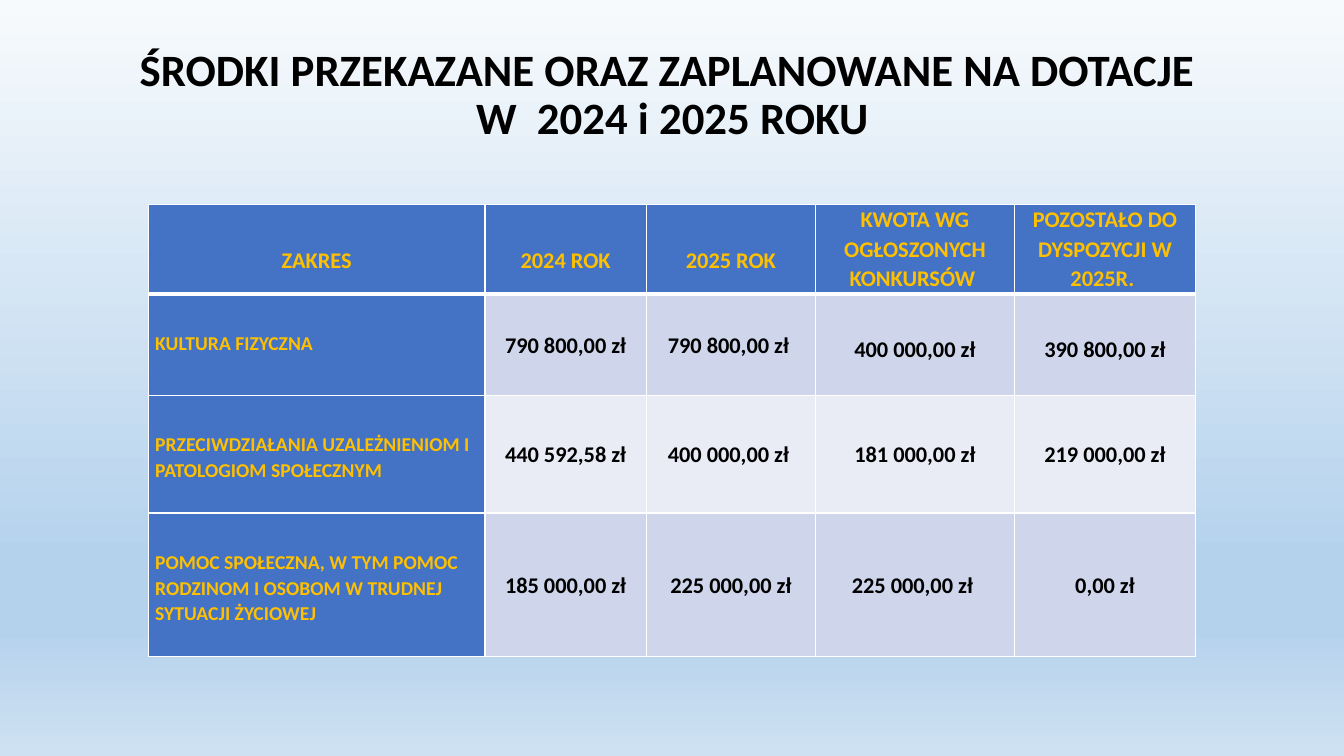
from lxml.etree import SubElement
from pptx import Presentation
from pptx.dml.color import RGBColor
from pptx.enum.text import MSO_ANCHOR, PP_ALIGN
from pptx.oxml.ns import qn
from pptx.util import Inches, Pt

WIDE, HIGH = Inches(13.33), Inches(7.5)
FACE = "Calibri"
HUES = {
    "black": "000000", "white": "FFFFFF", "gold": "FFC000", "blue": "4472C4",
    "dark": "CFD5EA", "light": "E9EBF5",
    "top": "F7FAFD", "sky": "B5D2EC", "base": "CEE1F2",
}
STOPS = [(0, "top"), (74, "sky"), (83, "sky"), (100, "base")]

# Table lengths in inches
COLS = [3.34, 1.6, 1.68, 1.97, 1.8]
ROWS = [0.89, 1, 1.17, 1.42]
SIDE = 0.07
DROP = {16: 0.4, 14: 0.36}  # one line plus its gap, by text size

TITLE = "ŚRODKI PRZEKAZANE ORAZ ZAPLANOWANE NA DOTACJE \vW  2024 i 2025 ROKU"
HEAD = ["ZAKRES", "2024 ROK", "2025 ROK",
        "KWOTA WG OGŁOSZONYCH KONKURSÓW ", "POZOSTAŁO DO DYSPOZYCJI W 2025R. "]
BODY = [
    ["KULTURA FIZYCZNA ",
     "790 800,00 zł", "790 800,00 zł ", "400 000,00 zł", "390 800,00 zł"],
    ["PRZECIWDZIAŁANIA UZALEŻNIENIOM I PATOLOGIOM SPOŁECZNYM",
     "440 592,58 zł", "400 000,00 zł ", "181 000,00 zł", "219 000,00 zł"],
    ["POMOC SPOŁECZNA, W TYM POMOC RODZINOM I OSOBOM W TRUDNEJ SYTUACJI ŻYCIOWEJ",
     "185 000,00 zł", "225 000,00 zł", "225 000,00 zł ", "0,00 zł"],
]


def color(name):
    return RGBColor.from_string(HUES[name])


def style(para, size, hue, align=PP_ALIGN.CENTER, lead=1.07):
    para.alignment, para.line_spacing = align, lead
    font = para.font
    font.name, font.size, font.bold = FACE, Pt(size), True
    font.color.rgb = color(hue)


def paint(slide):
    """Fill the background with a vertical gradient."""
    slide.background.fill.gradient()
    grad = slide._element.find(".//" + qn("a:gradFill"))
    for part in list(grad):
        grad.remove(part)
    stops = SubElement(grad, qn("a:gsLst"))
    for pos, name in STOPS:
        stop = SubElement(stops, qn("a:gs"), pos=str(pos * 1000))
        SubElement(stop, qn("a:srgbClr"), val=HUES[name])
    SubElement(grad, qn("a:lin"), ang="5400000", scaled="0")


def title(slide, text):
    box = slide.shapes.add_textbox(
        Inches(0.92), Inches(0.4), Inches(11.5), Inches(1.1))
    frame = box.text_frame
    frame.word_wrap, frame.vertical_anchor = True, MSO_ANCHOR.MIDDLE
    para = frame.paragraphs[0]
    para.text = text
    style(para, 32, "black", lead=0.9)


def edge(cell, base):
    """Draw white borders; base is the width of the bottom one."""
    props = cell._tc.get_or_add_tcPr()
    for spot, (tag, size) in enumerate(
            [("a:lnL", 1), ("a:lnR", 1), ("a:lnT", 1), ("a:lnB", base)]):
        line = SubElement(props, qn(tag), w=str(Pt(size)))
        fill = SubElement(line, qn("a:solidFill"))
        SubElement(fill, qn("a:srgbClr"), val=HUES["white"])
        props.insert(spot, line)


def put(cell, text, size, hue, fill, align=PP_ALIGN.CENTER, drop=None, base=1):
    """Fill one cell; without a drop its text is centred vertically."""
    cell.margin_left = cell.margin_right = Inches(SIDE)
    cell.margin_top, cell.margin_bottom = Inches(drop or 0), 0
    cell.vertical_anchor = MSO_ANCHOR.MIDDLE if drop is None else MSO_ANCHOR.TOP
    cell.fill.solid()
    cell.fill.fore_color.rgb = color(fill)
    para = cell.text_frame.paragraphs[0]
    para.text = text
    para.space_after = Pt(8)
    style(para, size, hue, align)
    edge(cell, base)


def grants(slide):
    table = slide.shapes.add_table(
        len(ROWS), len(COLS), Inches(1.47), Inches(2.03),
        Inches(sum(COLS)), Inches(sum(ROWS))).table
    for col, width in zip(table.columns, COLS):
        col.width = Inches(width)
    for row, height in zip(table.rows, ROWS):
        row.height = Inches(height)

    # Header: short labels sit one line lower
    for x, text in enumerate(HEAD):
        put(table.cell(0, x), text, 16, "gold", "blue",
            drop=DROP[16] if x < 3 else 0, base=3)

    # Body: scope label, then amounts on banded rows
    for y, (label, *sums) in enumerate(BODY, 1):
        put(table.cell(y, 0), label, 14, "gold", "blue",
            PP_ALIGN.LEFT, DROP[14])
        for x, text in enumerate(sums, 1):
            put(table.cell(y, x), text, 16, "black",
                "dark" if y % 2 else "light",
                drop=DROP[16] if y == 1 and x > 2 else None)


def main():
    deck = Presentation()
    deck.slide_width, deck.slide_height = WIDE, HIGH
    slide = deck.slides.add_slide(deck.slide_layouts[6])
    paint(slide)
    title(slide, TITLE)
    grants(slide)
    deck.save("out.pptx")


if __name__ == "__main__":
    main()
